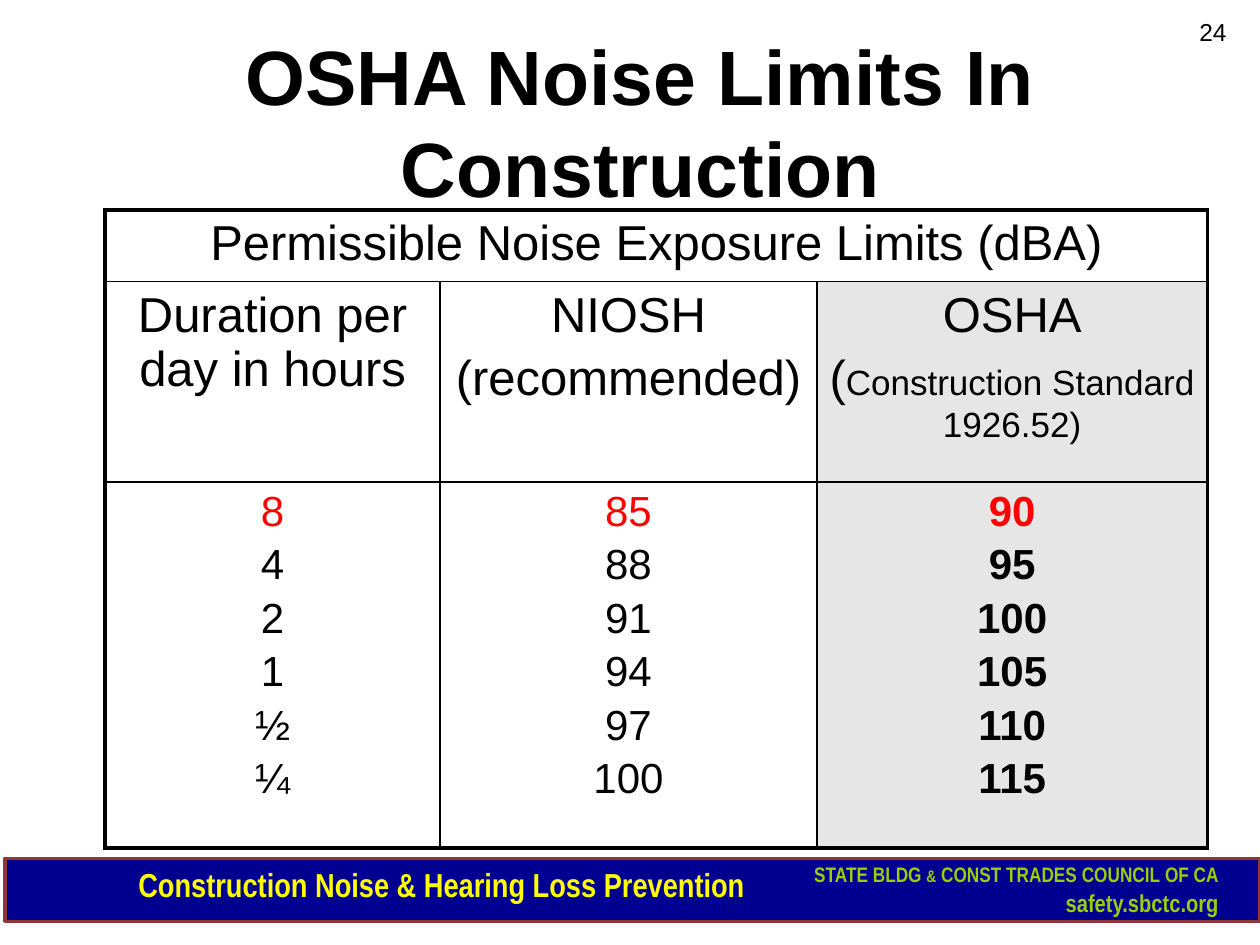
"""Build the slide with the table of permissible noise exposure limits."""
from lxml import etree
from pptx import Presentation
from pptx.dml.color import RGBColor
from pptx.enum.shapes import MSO_SHAPE
from pptx.enum.text import MSO_ANCHOR, MSO_AUTO_SIZE, PP_ALIGN
from pptx.oxml.ns import qn
from pptx.util import Pt

RECT = MSO_SHAPE.RECTANGLE
MIDDLE = MSO_ANCHOR.MIDDLE
NO_FIT = MSO_AUTO_SIZE.NONE
LEFT, CENTER, RIGHT = PP_ALIGN.LEFT, PP_ALIGN.CENTER, PP_ALIGN.RIGHT

BLACK = RGBColor(0x00, 0x00, 0x00)
RED = RGBColor(0xFF, 0x00, 0x00)
GREY = RGBColor(0xE6, 0xE6, 0xE6)
NAVY = RGBColor(0x00, 0x00, 0x90)
BROWN = RGBColor(0x8C, 0x38, 0x36)
YELLOW = RGBColor(0xFF, 0xFF, 0x00)
GREEN = RGBColor(0x9A, 0xCD, 0x0B)

THICK, THIN = 2.25, 1
COL_WIDTHS = [191.5, 215.3, 223.2]
ROW_HEIGHTS = [41, 114.5, 209]
HEADING = "Permissible Noise Exposure Limits (dBA)"
HEADERS = [
    [["Duration per day in hours"]],
    [["NIOSH"], ["(recommended)"]],
    [["OSHA"], ["(", "Construction Standard 1926.52)"]],
]
LIMITS = [
    ["8", "4", "2", "1", "½", "¼"],
    ["85", "88", "91", "94", "97", "100"],
    ["90", "95", "100", "105", "110", "115"],
]


class Deck:
    """Hold the style and the current slide."""

    def __init__(self, prs, font="Arial", narrow="Arial Narrow"):
        self.font, self.narrow = font, narrow
        self.slide = prs.slides.add_slide(prs.slide_layouts[5])

    def style(self, r, size, color=BLACK, bold=False, font=None):
        r.font.name = font or self.font
        r.font.size = Pt(size)
        r.font.bold = bold
        r.font.color.rgb = color

    def title(self, text, x, y, w, h, size):
        sp = self.slide.shapes.title
        sp.left, sp.top, sp.width, sp.height = Pt(x), Pt(y), Pt(w), Pt(h)
        tf = sp.text_frame
        tf.text = text
        tf.word_wrap, tf.auto_size, tf.vertical_anchor = True, NO_FIT, MIDDLE
        p = tf.paragraphs[0]
        p.alignment = CENTER
        self.style(p.runs[0], size, bold=True)

    def bar(self, x, y, w, h):
        sp = self.slide.shapes.add_shape(RECT, Pt(x), Pt(y), Pt(w), Pt(h))
        sp.shadow.inherit = False
        sp.fill.solid()
        sp.fill.fore_color.rgb = NAVY
        sp.line.color.rgb = BROWN
        sp.line.width = Pt(2)

    def text(self, lines, x, y, w, h, align=LEFT, **style):
        sp = self.slide.shapes.add_textbox(Pt(x), Pt(y), Pt(w), Pt(h))
        tf = sp.text_frame
        tf.word_wrap = True
        for i, runs in enumerate(lines):
            p = tf.add_paragraph() if i else tf.paragraphs[0]
            p.alignment = align
            for text, size, small_caps in runs:
                r = p.add_run()
                r.text = text
                self.style(r, size, **style)
                if small_caps:
                    r.font._element.set("cap", "small")

    def table(self, x, y, widths, heights):
        frame = self.slide.shapes.add_table(
            len(heights), len(widths), Pt(x), Pt(y), Pt(sum(widths)), Pt(sum(heights)))
        table = frame.table
        table.first_row = table.horz_banding = False
        for column, width in zip(table.columns, widths):
            column.width = Pt(width)
        for row, height in zip(table.rows, heights):
            row.height = Pt(height)
        return table

    def cell(self, cell, lines, sizes, gap, edges, fill=None, first=BLACK, bold=False):
        tf = cell.text_frame
        for i, runs in enumerate(lines):
            p = tf.add_paragraph() if i else tf.paragraphs[0]
            p.alignment = CENTER
            p.space_before = Pt(gap if i else 0)
            for text, size in zip(runs, sizes):
                r = p.add_run()
                r.text = text
                self.style(r, size, BLACK if i else first, bold)
        if fill is None:
            cell.fill.background()
        else:
            cell.fill.solid()
            cell.fill.fore_color.rgb = fill
        self.borders(cell, edges)

    def borders(self, cell, edges):
        props = cell._tc.get_or_add_tcPr()
        for i, (side, width) in enumerate(zip("LRTB", edges)):
            ln = etree.Element(qn(f"a:ln{side}"), w=str(Pt(width)))
            solid = etree.SubElement(ln, qn("a:solidFill"))
            etree.SubElement(solid, qn("a:srgbClr"), val=str(BLACK))
            props.insert(i, ln)


def main():
    prs = Presentation()
    prs.slide_width, prs.slide_height = Pt(720), Pt(540)
    deck = Deck(prs)

    deck.bar(3, 490.5, 717, 36)
    deck.text([[("Construction Noise & Hearing Loss Prevention", 19, False)]],
              72, 490.5, 639, 30, color=YELLOW, bold=True, font=deck.narrow)
    deck.text([[("state bldg ", 15, True), ("&", 12, True),
                (" const trades council of ca", 15, True)],
               [("safety.sbctc.org", 14, False)]],
              438, 486, 265.5, 42.5, RIGHT, color=GREEN, bold=True, font=deck.narrow)

    deck.title("OSHA Noise Limits In Construction", 60, 24, 612, 90, 44)

    table = deck.table(60, 120, COL_WIDTHS, ROW_HEIGHTS)
    last = len(COL_WIDTHS) - 1
    table.cell(0, 0).merge(table.cell(0, last))
    deck.cell(table.cell(0, 0), [[HEADING]], [28], 0, (THICK, THICK, THICK, THIN))
    for col, (header, limits) in enumerate(zip(HEADERS, LIMITS)):
        left = THIN if col else THICK
        right = THICK if col == last else THIN
        fill = GREY if col == last else None
        deck.cell(table.cell(1, col), header, [28, 20], 5,
                  (left, right, THIN, THIN), fill)
        deck.cell(table.cell(2, col), [[limit] for limit in limits], [24], 3.8,
                  (left, right, THIN, THICK), fill, RED, col == last)

    deck.text([[("24", 14, False)]], 540, 6, 168, 37.5, RIGHT)
    prs.save("out.pptx")


if __name__ == "__main__":
    main()
